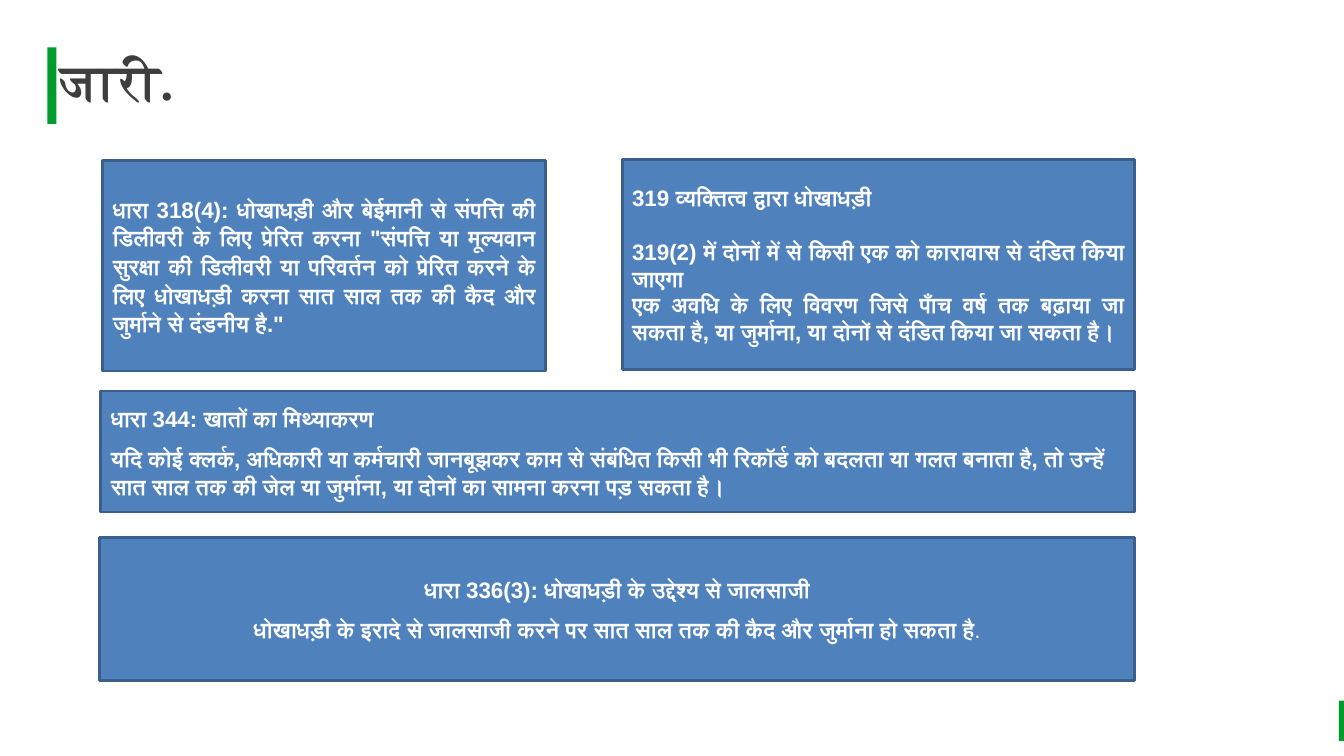
from lxml.etree import SubElement
from pptx import Presentation
from pptx.dml.color import RGBColor
from pptx.enum.shapes import MSO_SHAPE as Preset
from pptx.enum.text import MSO_ANCHOR as Anchor, MSO_AUTO_SIZE as AutoSize, PP_ALIGN as Align
from pptx.oxml.ns import qn
from pptx.util import Inches, Pt

GREEN, BLUE, NAVY, WHITE, GREY = "029B2D", "4F81BD", "3A5F8C", "FFFFFF", "3E3E3E"
TITLE = "जारी."
ACCENT_BARS = [(0.47, 0.47, 0.09, 0.76), (13.28, 6.95, 0.05, 0.4)]

LOOSE = (1.07, 8)
TIGHT = (1, 0)
HEADING_GAP = (1, 19.2)
SECTIONS = [
    ((1.02, 1.59, 4.39, 2.09), Align.JUSTIFY, [
        (LOOSE, [("धारा 318(4): धोखाधड़ी और बेईमानी से संपत्ति की डिलीवरी के लिए प्रेरित करना "
                  "\"संपत्ति या मूल्यवान सुरक्षा की डिलीवरी या परिवर्तन को प्रेरित करने के लिए "
                  "धोखाधड़ी करना सात साल तक की कैद और जुर्माने से दंडनीय है.\"", True)]),
    ]),
    ((6.17, 1.58, 5.08, 2.09), Align.JUSTIFY, [
        (HEADING_GAP, [("319 व्यक्तित्व द्वारा धोखाधड़ी", True)]),
        (TIGHT, [("319(2) में दोनों में से किसी एक को कारावास से दंडित किया जाएगा", True)]),
        (TIGHT, [("एक अवधि के लिए विवरण जिसे पाँच वर्ष तक बढ़ाया जा सकता है, या जुर्माना, "
                  "या दोनों से दंडित किया जा सकता है।", True)]),
    ]),
    ((1, 3.88, 10.25, 1.2), Align.LEFT, [
        (LOOSE, [("धारा 344: खातों का मिथ्याकरण", True)]),
        (LOOSE, [("यदि कोई क्लर्क, अधिकारी या कर्मचारी जानबूझकर काम से संबंधित किसी भी रिकॉर्ड को "
                  "बदलता या गलत बनाता है, तो उन्हें सात साल तक की जेल या जुर्माना, या दोनों का "
                  "सामना करना पड़ सकता है।", True)]),
    ]),
    ((0.99, 5.33, 10.26, 1.42), Align.CENTER, [
        (LOOSE, [("धारा 336(3): धोखाधड़ी के उद्देश्य से जालसाजी", True)]),
        (LOOSE, [("धोखाधड़ी के इरादे से जालसाजी करने पर सात साल तक की कैद और जुर्माना हो सकता है", True),
                 (".", False)]),
    ]),
]


def color(value):
    return RGBColor.from_string(value)


def add_run(paragraph, text, size, typeface, text_color, bold=True):
    run = paragraph.add_run()
    run.text = text
    run.font.size = Pt(size)
    run.font.bold = bold
    run.font.name = typeface
    run.font.color.rgb = color(text_color)
    SubElement(run._r.get_or_add_rPr(), qn("a:cs")).set("typeface", typeface)


def add_rectangle(slide, box, fill, line=None):
    shape = slide.shapes.add_shape(Preset.RECTANGLE, *map(Inches, box))
    shape.shadow.inherit = False
    shape.fill.solid()
    shape.fill.fore_color.rgb = color(fill)
    if line:
        shape.line.color.rgb = color(line)
        shape.line.width = Pt(2)
    else:
        shape.line.fill.background()
    return shape


def add_title(slide):
    title = slide.shapes.title
    title.left, title.top, title.width, title.height = map(Inches, (0.6, 0.5, 12.56, 0.61))
    frame = title.text_frame
    frame.margin_left = frame.margin_right = frame.margin_top = frame.margin_bottom = 0
    frame.vertical_anchor = Anchor.TOP
    frame.auto_size = AutoSize.SHAPE_TO_FIT_TEXT
    frame.paragraphs[0].alignment = Align.LEFT
    add_run(frame.paragraphs[0], TITLE, 36, "Times New Roman", GREY)


def add_section(slide, box, alignment, paragraphs):
    frame = add_rectangle(slide, box, BLUE, NAVY).text_frame
    frame.word_wrap = True
    frame.vertical_anchor = Anchor.MIDDLE
    for index, ((line_spacing, space_after), runs) in enumerate(paragraphs):
        paragraph = frame.add_paragraph() if index else frame.paragraphs[0]
        paragraph.alignment = alignment
        paragraph.line_spacing = float(line_spacing)
        paragraph.space_after = Pt(space_after)
        for text, bold in runs:
            add_run(paragraph, text, 16, "Arial", WHITE, bold)


def main():
    presentation = Presentation()
    presentation.slide_width, presentation.slide_height = Inches(13.33), Inches(7.5)
    slide = presentation.slides.add_slide(presentation.slide_layouts[5])
    add_title(slide)
    for box in ACCENT_BARS:
        add_rectangle(slide, box, GREEN)
    for section in SECTIONS:
        add_section(slide, *section)
    presentation.save("out.pptx")


if __name__ == "__main__":
    main()
